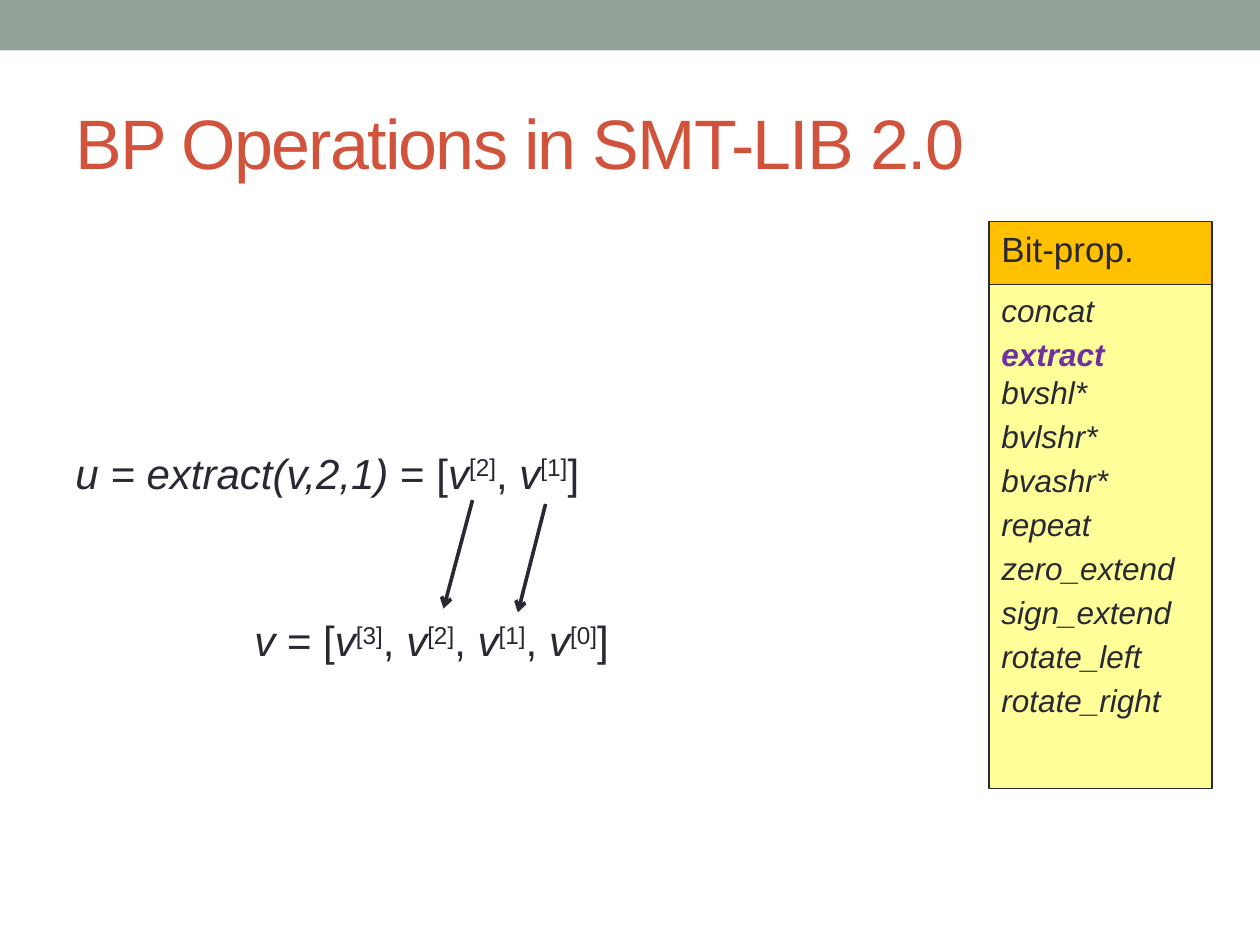
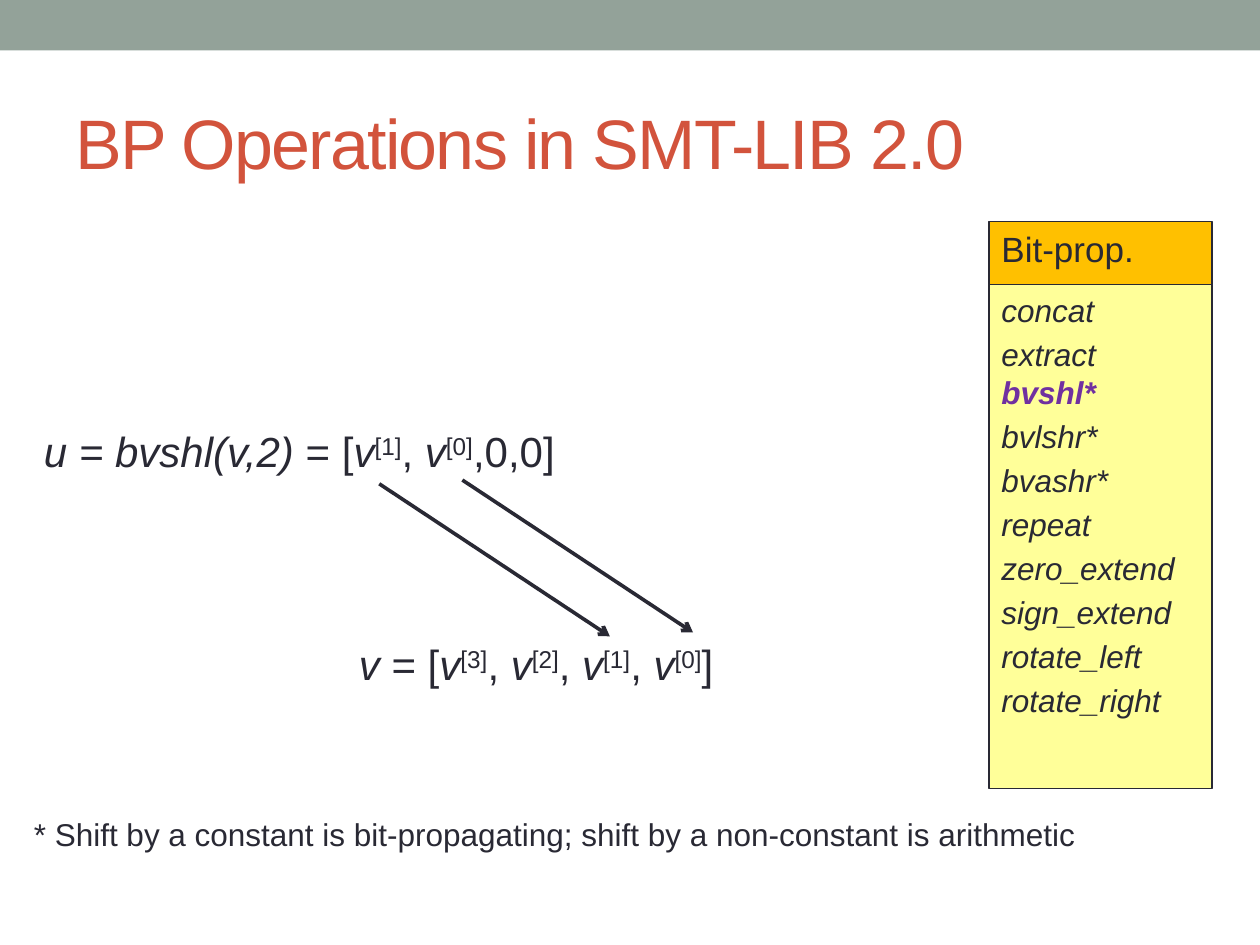
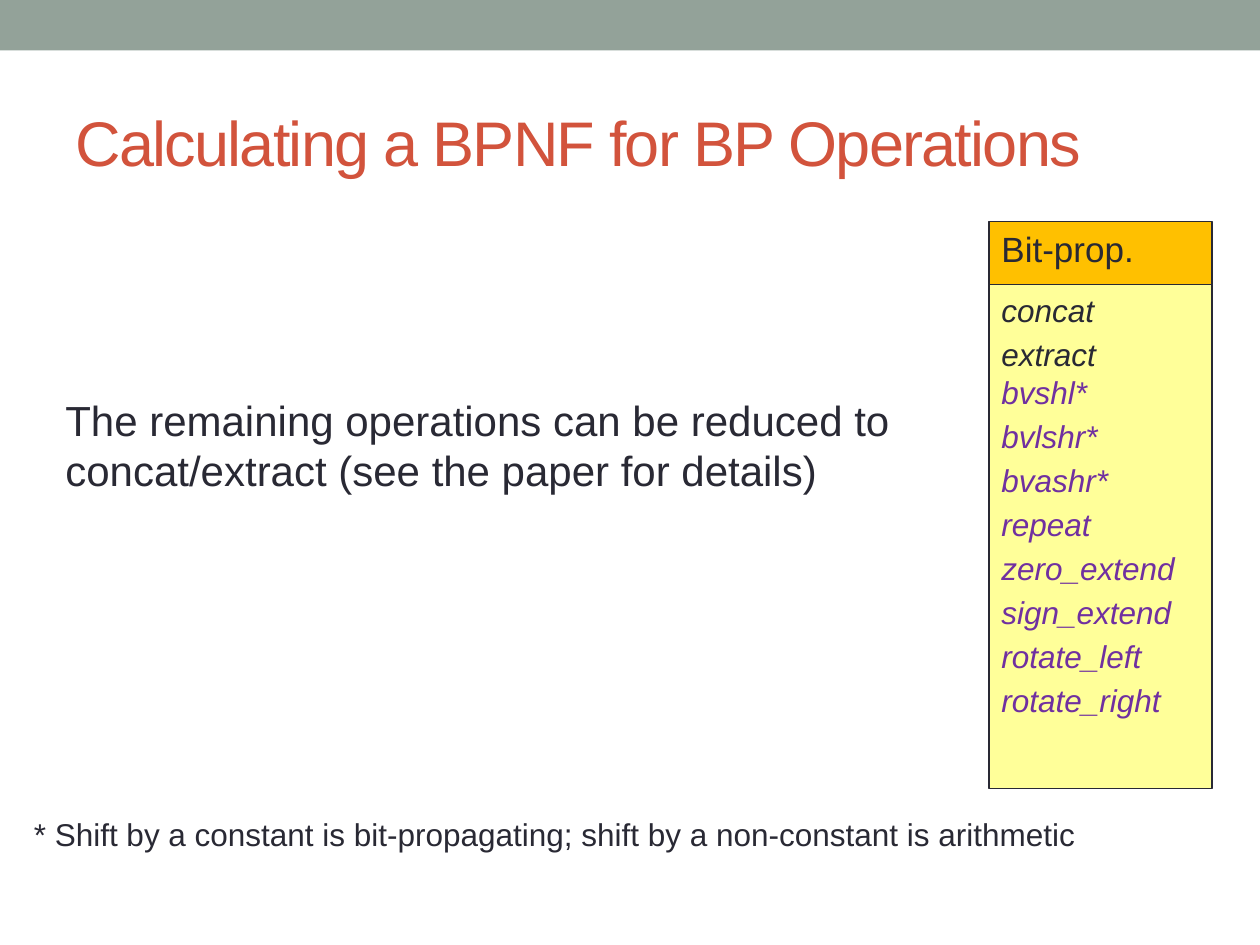
import dataclasses

import pptx
import pptx.dml.color
import pptx.enum.shapes
import pptx.enum.text
import pptx.oxml.ns
import pptx.util
from lxml import etree


@dataclasses.dataclass(frozen=True)
class Theme:
    font: str = "Arial"
    ink: str = "292934"
    band: str = "93A299"
    title: str = "D2533C"
    header: str = "FFC000"
    panel: str = "FFFF99"
    accent: str = "7030A0"
    header_size: int = 20
    list_size: int = 18
    body_size: int = 24
    outline: float = 0.75
    arrow: float = 2.08


theme = Theme()
CELL = pptx.util.Inches(0.1)  # the slide is a grid of 100 columns by 75 rows
COLUMNS, ROWS = 100, 75


def add_paragraph_box(slide, area, fill=None, outlined=False):
    """Add a text box, or a rectangle if filled; return its first paragraph."""
    place = [round(cells * CELL) for cells in area]
    if fill:
        box = slide.shapes.add_shape(pptx.enum.shapes.MSO_SHAPE.RECTANGLE, *place)
        box.shadow.inherit = False
        box.fill.solid()
        box.fill.fore_color.rgb = pptx.dml.color.RGBColor.from_string(fill)
        if outlined:
            box.line.color.rgb = pptx.dml.color.RGBColor.from_string(theme.ink)
            box.line.width = pptx.util.Pt(theme.outline)
        else:
            box.line.fill.background()
    else:
        box = slide.shapes.add_textbox(*place)
    box.text_frame.word_wrap = True
    box.text_frame.vertical_anchor = pptx.enum.text.MSO_ANCHOR.TOP
    paragraph = box.text_frame.paragraphs[0]
    paragraph.alignment = pptx.enum.text.PP_ALIGN.LEFT
    return paragraph


def add_run(paragraph, text, size, color=theme.ink, italic=False, bold=False, **marks):
    """Add a run; marks are run attributes such as baseline or spc."""
    run = paragraph.add_run()
    run.text = text
    run.font.name = theme.font
    run.font.size = pptx.util.Pt(size)
    run.font.italic = italic
    run.font.bold = bold
    run.font.color.rgb = pptx.dml.color.RGBColor.from_string(color)
    for mark, value in marks.items():
        run.font._element.set(mark, str(value))


# Each line of the list is one paragraph; a pair shares it with a line break.
OPERATIONS = [
    ["concat"], ["extract", "bvshl*"], ["bvlshr*"], ["bvashr*"], ["repeat"],
    ["zero_extend"], ["sign_extend"], ["rotate_left"], ["rotate_right"],
]
REDUCED = [name for line in OPERATIONS for name in line][2:]
FOOTNOTE = ("* Shift by a constant is bit-propagating; "
            "shift by a non-constant is arithmetic")
BP_TITLE = "BP Operations in SMT-LIB 2.0"

# Equations: area, left side, bits of v, ending. Arrows: tip, then tail.
SLIDES = [
    dict(title=BP_TITLE, title_size=40, accented=["extract"], bold=True,
         equations=[((19.2, 48.3, 32.5, 5), "v ", [3, 2, 1, 0], "]"),
                    ((5, 35, 67.5, 5), "u = extract(v,2,1) ", [2, 1], "]")],
         arrows=[((41.1, 48.6), (43.3, 40)), ((35.2, 48.3), (37.5, 39.7))],
         statement=None, footnote=None),
    dict(title=BP_TITLE, title_size=40, accented=["bvshl*"], bold=True,
         equations=[((27.5, 50.2, 42.5, 5), "v ", [3, 2, 1, 0], "]"),
                    ((2.5, 33.3, 44.2, 5), "u = bvshl(v,2) ", [1, 0], ",0,0]")],
         arrows=[((55, 50.2), (36.7, 38.1)), ((48.4, 50.5), (30.1, 38.4))],
         statement=None, footnote=FOOTNOTE),
    dict(title="Calculating a BPNF for BP Operations", title_size=36,
         accented=REDUCED, bold=False, equations=[], arrows=[],
         statement="The remaining operations can be reduced to "
                   "concat/extract (see the paper for details)",
         footnote=FOOTNOTE),
]

deck = pptx.Presentation()
deck.slide_width = COLUMNS * CELL
deck.slide_height = ROWS * CELL

for content in SLIDES:
    slide = deck.slides.add_slide(deck.slide_layouts[6])
    add_paragraph_box(slide, (0, 0, COLUMNS, 4), theme.band)

    title = add_paragraph_box(slide, (5, 5.8, 90, 10.8))
    title._parent.vertical_anchor = pptx.enum.text.MSO_ANCHOR.MIDDLE
    add_run(title, content["title"], content["title_size"], theme.title, spc=-100)

    header = add_paragraph_box(slide, (78.5, 17.6, 17.7, 5), theme.header, True)
    header.space_before = pptx.util.Pt(0.2 * theme.header_size)
    add_run(header, "Bit-prop.", theme.header_size)

    line = add_paragraph_box(slide, (78.5, 22.6, 17.7, 40), theme.panel, True)
    operations = line._parent
    for row, names in enumerate(OPERATIONS):
        if row:
            line = operations.add_paragraph()
            line.alignment = pptx.enum.text.PP_ALIGN.LEFT
        line.space_before = pptx.util.Pt(0.2 * theme.list_size)
        for position, name in enumerate(names):
            if position:
                line.add_line_break()
            accented = name in content["accented"]
            add_run(line, name, theme.list_size,
                    theme.accent if accented else theme.ink,
                    italic=True, bold=accented and content["bold"])

    for area, left_side, bits, ending in content["equations"]:
        equation = add_paragraph_box(slide, area)
        add_run(equation, left_side, theme.body_size, italic=True)
        add_run(equation, "= [", theme.body_size)
        for position, bit in enumerate(bits):
            if position:
                add_run(equation, ", ", theme.body_size)
            add_run(equation, "v", theme.body_size, italic=True)
            add_run(equation, f"[{bit}]", theme.body_size, baseline=30000)
        add_run(equation, ending, theme.body_size)

    for tip, tail in content["arrows"]:
        arrow = slide.shapes.add_connector(
            pptx.enum.shapes.MSO_CONNECTOR.STRAIGHT,
            *[round(cells * CELL) for cells in tip + tail])
        arrow.line.color.rgb = pptx.dml.color.RGBColor.from_string(theme.ink)
        arrow.line.width = pptx.util.Pt(theme.arrow)
        etree.SubElement(arrow.line._get_or_add_ln(),
                         pptx.oxml.ns.qn("a:headEnd"), type="arrow")
        etree.SubElement(arrow._element.spPr, pptx.oxml.ns.qn("a:effectLst"))

    if content["statement"]:
        statement = add_paragraph_box(slide, (4.2, 30.8, 69.2, 9.1))
        add_run(statement, content["statement"], theme.body_size)
    if content["footnote"]:
        footnote = add_paragraph_box(slide, (1.7, 64.2, 95, 4))
        add_run(footnote, content["footnote"], theme.list_size)

deck.save("out.pptx")
